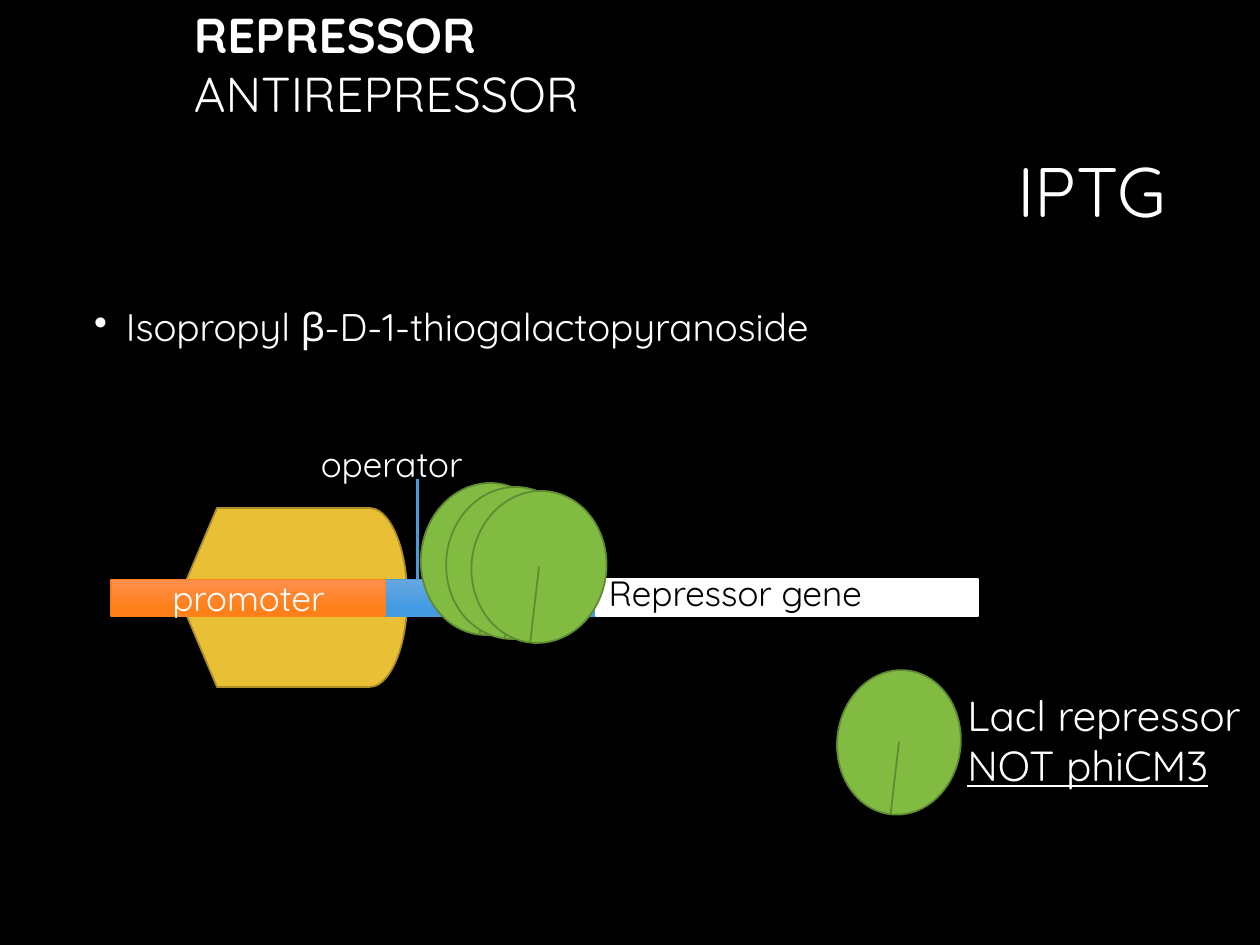
from dataclasses import dataclass

from lxml.etree import SubElement
from pptx import Presentation
from pptx.dml.color import RGBColor
from pptx.enum.shapes import MSO_CONNECTOR, MSO_SHAPE
from pptx.enum.text import MSO_ANCHOR, PP_ALIGN
from pptx.oxml.ns import qn
from pptx.util import Cm, Pt


@dataclass(frozen=True)
class Theme:
    font: str = "Quicksand"
    background: str = "000000"
    light: str = "FFFFFF"
    dark: str = "000000"
    polymerase: str = "E9BF35"
    polymerase_line: str = "AC8D27"
    repressor: str = "81BB42"
    repressor_line: str = "5F8A31"
    operator: tuple = ("66A7E0", "439CE3")
    operator_line: str = "4A9BDC"
    promoter: tuple = ("FE904F", "FF8019")
    promoter_line: str = "FE801A"
    title_size: int = 40
    header_size: int = 28
    caption_size: int = 24
    body_size: int = 22
    label_size: int = 20


THEME = Theme()


def rgb(value):
    return RGBColor.from_string(value)


def style(paragraph, size, color=THEME.light, bold=None, underline=None):
    font = paragraph.font
    font.name = THEME.font
    font.size = Pt(size)
    font.color.rgb = rgb(color)
    font.bold = bold
    font.underline = underline


def add_text(slide, box, lines, size, color=THEME.light):
    shape = slide.shapes.add_textbox(*map(Cm, box))
    frame = shape.text_frame
    frame.word_wrap = True
    frame.text = "\n".join(lines)
    for paragraph in frame.paragraphs:
        style(paragraph, size, color)
    return frame


def add_block(slide, kind, box, fill, line, line_width=1):
    shape = slide.shapes.add_shape(kind, *map(Cm, box))
    shape.shadow.inherit = False
    if isinstance(fill, tuple):
        shape.fill.gradient()
        shape.fill.gradient_angle = 270
        for stop, color, position in zip(shape.fill.gradient_stops, fill, (0, 0.78)):
            stop.color.rgb = rgb(color)
            stop.position = position
    else:
        shape.fill.solid()
        shape.fill.fore_color.rgb = rgb(fill)
    shape.line.color.rgb = rgb(line)
    shape.line.width = Pt(line_width)
    return shape


def add_repressor(slide, box):
    shape = add_block(slide, MSO_SHAPE.PIE, box, THEME.repressor, THEME.repressor_line)
    shape.adjustments[0] = 0
    shape.adjustments[1] = -90
    shape.rotation = 96.6


def add_title(slide, box):
    frame = add_text(slide, box, ["IPTG"], THEME.title_size)
    frame.vertical_anchor = MSO_ANCHOR.MIDDLE
    frame.paragraphs[0].alignment = PP_ALIGN.RIGHT
    frame.paragraphs[0].line_spacing = 0.9


def add_header(slide, box):
    frame = add_text(slide, box, ["REPRESSOR", "ANTIREPRESSOR"], THEME.header_size)
    frame.paragraphs[0].font.bold = True


def add_body(slide, box):
    frame = add_text(slide, box, ["Isopropyl β-D-1-thiogalactopyranoside"], THEME.body_size)
    paragraph = frame.paragraphs[0]
    paragraph.line_spacing = 0.9
    properties = paragraph._p.get_or_add_pPr()
    properties.set("marL", str(Cm(0.64)))
    properties.set("indent", str(-Cm(0.64)))
    bullet = SubElement(properties, qn("a:buChar"))
    bullet.set("char", "•")
    properties.insert(1, bullet)


def add_gene(slide, box):
    left, top, width, height = box
    operator_left, gene_left = left + 5.48, left + 9.78
    add_block(slide, MSO_SHAPE.RECTANGLE, (operator_left, top, 4.32, height),
              THEME.operator, THEME.operator_line, 0.75)
    add_block(slide, MSO_SHAPE.RECTANGLE, (gene_left, top, left + width - gene_left, height),
              THEME.light, THEME.light)
    add_text(slide, (gene_left, top - 0.28, 7.5, 1.12), ["Repressor gene"],
             THEME.label_size, THEME.dark)

    promoter = add_block(slide, MSO_SHAPE.RECTANGLE, (left, top, 5.54, height),
                         THEME.promoter, THEME.promoter_line, 0.75)
    promoter.text_frame.text = "promoter"
    promoter.text_frame.vertical_anchor = MSO_ANCHOR.MIDDLE
    promoter.text_frame.paragraphs[0].alignment = PP_ALIGN.CENTER
    style(promoter.text_frame.paragraphs[0], THEME.label_size)

    pointer_left = Cm(left + 6.17)
    pointer = slide.shapes.add_connector(MSO_CONNECTOR.STRAIGHT, pointer_left, Cm(top),
                                         pointer_left, Cm(top - 2.03))
    pointer.line.color.rgb = rgb(THEME.operator_line)
    pointer.line.width = Pt(1.5)
    SubElement(pointer._element.spPr, qn("a:effectLst"))
    add_text(slide, (left + 3.98, top - 2.89, 3.84, 1.17), ["operator"], THEME.label_size)


def add_bound_repressors(slide, box):
    left, top, width, height = box
    for index in range(3):
        add_repressor(slide, (left + 0.51 * index, top + 0.08 * index, width, height))


def add_legend(slide, box):
    left, top, width, height = box
    add_repressor(slide, (left, top, 2.92, height))
    frame = add_text(slide, (left + 2.59, top + 0.05, width - 2.59, 2.31),
                     ["Lacl repressor", "NOT phiCM3"], THEME.caption_size)
    frame.paragraphs[1].font.underline = True


def main():
    presentation = Presentation()
    presentation.slide_width = Cm(25.4)
    presentation.slide_height = Cm(19.05)
    slide = presentation.slides.add_slide(presentation.slide_layouts[6])
    slide.background.fill.solid()
    slide.background.fill.fore_color.rgb = rgb(THEME.background)

    add_title(slide, (6.05, 2.13, 17.7, 3.58))
    add_header(slide, (3.66, -0.03, 18.24, 2.6))
    add_body(slide, (1.65, 6.1, 22.1, 11.3))
    add_block(slide, MSO_SHAPE.FLOWCHART_DISPLAY, (3.61, 10.24, 4.6, 3.61),
              THEME.polymerase, THEME.polymerase_line)
    add_gene(slide, (2.24, 11.68, 17.48, 0.74))
    add_bound_repressors(slide, (8.31, 9.91, 3.07, 2.72))
    add_legend(slide, (16.66, 13.72, 8.74, 2.49))
    presentation.save("out.pptx")


if __name__ == "__main__":
    main()
